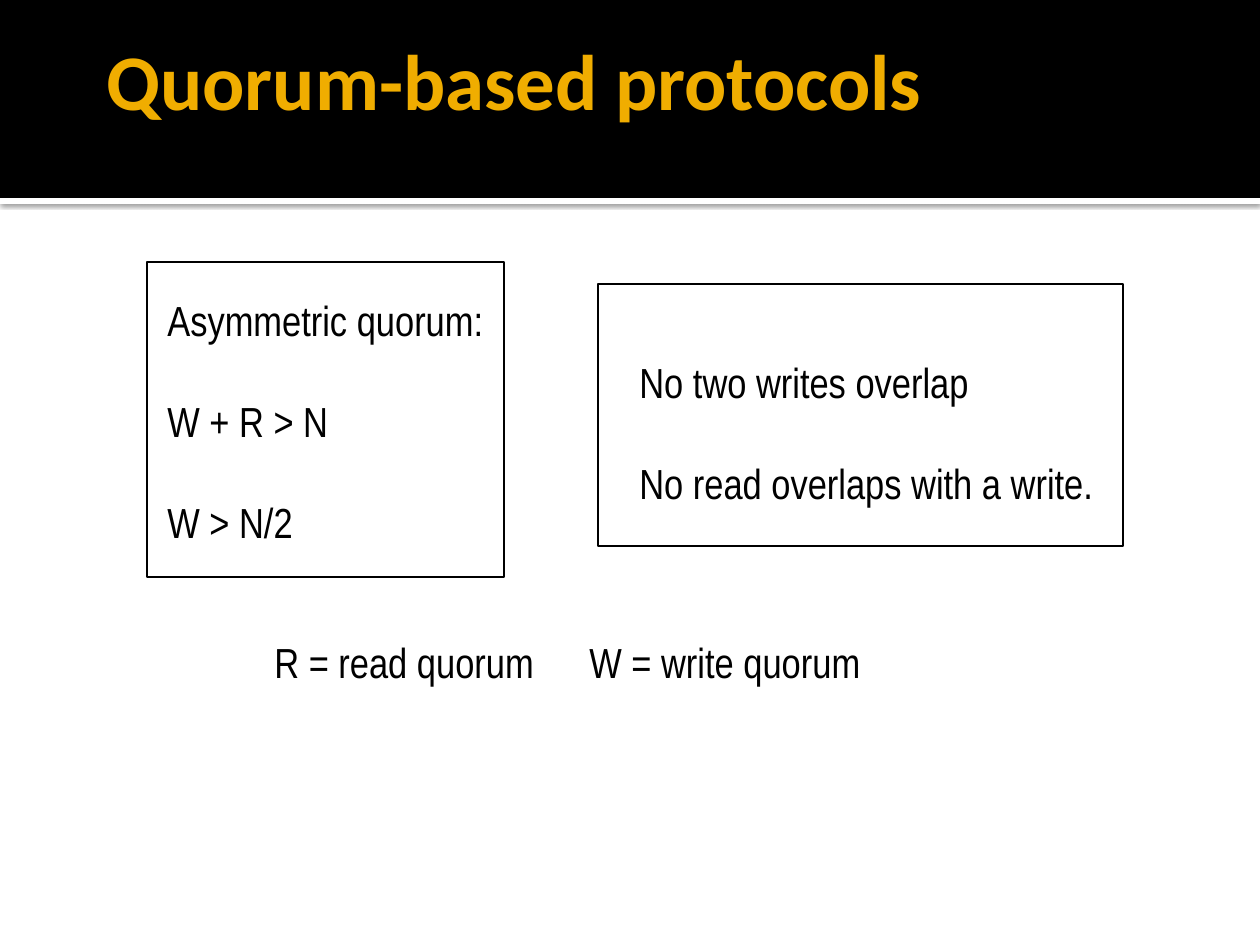
"""Build a slide on quorum-based protocols."""
from lxml import etree
from pptx import Presentation
from pptx import util as u
from pptx.dml.color import RGBColor
from pptx.enum import shapes, text
from pptx.oxml import ns

PX = 914400 / 126
BODY = {"font": "Arial Narrow", "size": 24, "color": "000000"}


def add_box(page, area, fill=None, line=None):
    box = page.shapes.add_shape(shapes.MSO_SHAPE.RECTANGLE, *(round(v * PX) for v in area))
    box.shadow.inherit = False
    if fill:
        box.fill.solid()
        box.fill.fore_color.rgb = RGBColor.from_string(fill)
    else:
        box.fill.background()
    if line:
        box.line.color.rgb = RGBColor.from_string(line)
        box.line.width = u.Pt(0.75)
    else:
        box.line.fill.background()
    return box


def add_text(page, area, lines, font, size, color, bold=False, anchor="TOP", wrap=False):
    box = page.shapes.add_textbox(*(round(v * PX) for v in area))
    frame = box.text_frame
    frame.word_wrap = wrap
    frame.vertical_anchor = text.MSO_ANCHOR[anchor]
    for index, line in enumerate(lines):
        para = frame.add_paragraph() if index else frame.paragraphs[0]
        if index:
            para.space_before = u.Pt(29)
        span = para.add_run()
        span.text = line
        span.font.name = font
        span.font.size = u.Pt(size)
        span.font.bold = bold
        span.font.color.rgb = RGBColor.from_string(color)


deck = Presentation()
deck.slide_width = round(1260 * PX)
deck.slide_height = round(945 * PX)
page = deck.slides.add_slide(deck.slide_layouts[6])

strip = add_box(page, (0, 198, 1260, 6), fill="FFFFFF")
effects = strip._element.spPr.find(ns.qn("a:effectLst"))
shadow = etree.SubElement(effects, ns.qn("a:outerShdw"), blurRad=str(u.Pt(2.5)),
                          dist=str(u.Pt(0.8)), dir="5400000", algn="tl", rotWithShape="0")
shade = etree.SubElement(shadow, ns.qn("a:srgbClr"), val="000000")
etree.SubElement(shade, ns.qn("a:alpha"), val="60000")

add_box(page, (0, 0, 1260, 198), fill="000000")
add_text(page, (94, 0, 1071, 158), ["Quorum-based protocols"], "Calibri", 45, "F0AD00",
         bold=True, anchor="MIDDLE", wrap=True)

add_text(page, (155, 288, 341, 265), ["Asymmetric quorum:", "W + R > N", "W > N/2"], **BODY)
add_text(page, (627, 300, 479, 214),
         ["No two writes overlap", "No read overlaps with a write."], anchor="BOTTOM", **BODY)
for frame_area in ((147, 262, 357, 315), (598, 284, 525, 262)):
    add_box(page, frame_area, line="000000")
add_text(page, (262, 630, 674, 63), ["R = read quorum\tW = write quorum"], **BODY)

deck.save("out.pptx")
